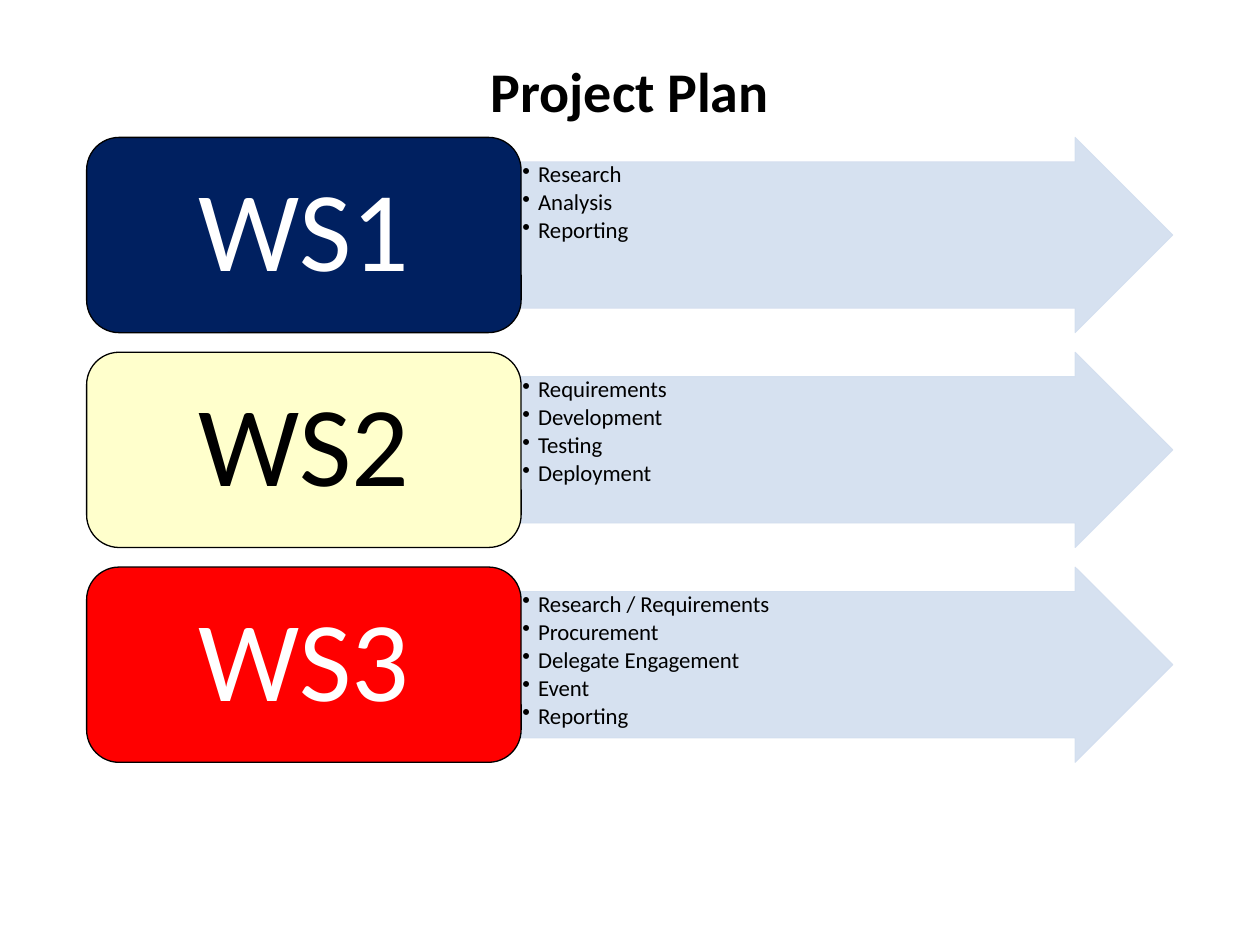
from lxml import etree
from pptx import Presentation
from pptx.dml.color import RGBColor
from pptx.enum import shapes, text
from pptx.oxml import ns
from pptx.util import Pt

BLACK = RGBColor(0, 0, 0)
WHITE = RGBColor(255, 255, 255)
NAVY = RGBColor(0, 0x20, 0x60)
CREAM = RGBColor(255, 255, 0xCC)
RED = RGBColor(255, 0, 0)
PALE = RGBColor(0xD2, 0xDE, 0xEF)

LEFT, TOP, CARD, ARROW, HIGH = 49.5, 78.5, 248.3, 372.4, 111.6
PITCH = HIGH * 1.1
ROWS = [
    ("WS1", NAVY, WHITE, ["Research", "Analysis", "Reporting"]),
    ("WS2", CREAM, BLACK,
     ["Requirements", "Development", "Testing", "Deployment"]),
    ("WS3", RED, WHITE,
     ["Research / Requirements", "Procurement", "Delegate Engagement",
      "Event", "Reporting"]),
]


def assign(item, values):
    """Set each named attribute of an item."""
    for name, value in values.items():
        setattr(item, name, value)


def write(shape, lines, size, color, bold=False, align=text.PP_ALIGN.CENTER,
          anchor=text.MSO_ANCHOR.MIDDLE, inset=0, after=0, bullet=False):
    """Fill a shape with formatted paragraphs."""
    frame = shape.text_frame
    assign(frame, {"word_wrap": True, "vertical_anchor": anchor,
                   "margin_left": Pt(inset), "margin_right": Pt(inset),
                   "margin_top": Pt(inset), "margin_bottom": Pt(inset)})
    frame.text = "\n".join(lines)
    for para in frame.paragraphs:
        if bullet:
            mark(para)
        assign(para, {"alignment": align, "line_spacing": 0.9,
                      "space_after": Pt(after)})
        assign(para.font, {"size": Pt(size), "name": "Calibri", "bold": bold})
        para.font.color.rgb = color


def mark(para):
    """Give a paragraph a round bullet and a hanging indent."""
    props = para._p.get_or_add_pPr()
    props.set("marL", str(Pt(9)))
    props.set("indent", str(Pt(-9)))
    etree.SubElement(props, ns.qn("a:buChar")).set("char", "•")


def fade(shape, share):
    """Set the opacity of a shape's fill and line in percent."""
    for color in shape._element.spPr.iter(ns.qn("a:srgbClr")):
        etree.SubElement(color, ns.qn("a:alpha")).set("val", str(share * 1000))


def block(slide, kind, box, fill, line, width):
    """Add a flat preset shape."""
    shape = slide.shapes.add_shape(kind, *map(Pt, box))
    shape.shadow.inherit = False
    shape.fill.solid()
    shape.fill.fore_color.rgb = fill
    shape.line.color.rgb = line
    shape.line.width = Pt(width)
    return shape


def arrow(slide, top, tasks):
    """Add a pale arrow listing the tasks of a stream."""
    shape = block(slide, shapes.MSO_SHAPE.RIGHT_ARROW,
                  (LEFT + CARD, top, ARROW, HIGH), PALE, PALE, 0.5)
    shape.adjustments[0] = 0.75
    shape.adjustments[1] = 0.5
    fade(shape, 90)
    write(shape, tasks, 13, BLACK, align=text.PP_ALIGN.LEFT,
          anchor=text.MSO_ANCHOR.TOP, inset=0.65, after=1.95, bullet=True)


def card(slide, top, name, fill, ink):
    """Add the rounded card naming a stream."""
    shape = block(slide, shapes.MSO_SHAPE.ROUNDED_RECTANGLE,
                  (LEFT, top, CARD, HIGH), fill, BLACK, 0.75)
    write(shape, [name], 65, ink, inset=10)


def title(slide, words):
    """Add the slide heading."""
    box = slide.shapes.add_textbox(Pt(LEFT), Pt(28.8), Pt(CARD + ARROW), Pt(49.7))
    write(box, [words], 32, BLACK, bold=True)


def main():
    """Build and save the slide."""
    deck = Presentation()
    assign(deck, {"slide_width": Pt(720), "slide_height": Pt(540)})
    slide = deck.slides.add_slide(deck.slide_layouts[6])
    title(slide, "Project Plan")
    for row, (name, fill, ink, tasks) in enumerate(ROWS):
        top = TOP + row * PITCH
        arrow(slide, top, tasks)
        card(slide, top, name, fill, ink)
    deck.save("out.pptx")


if __name__ == "__main__":
    main()
